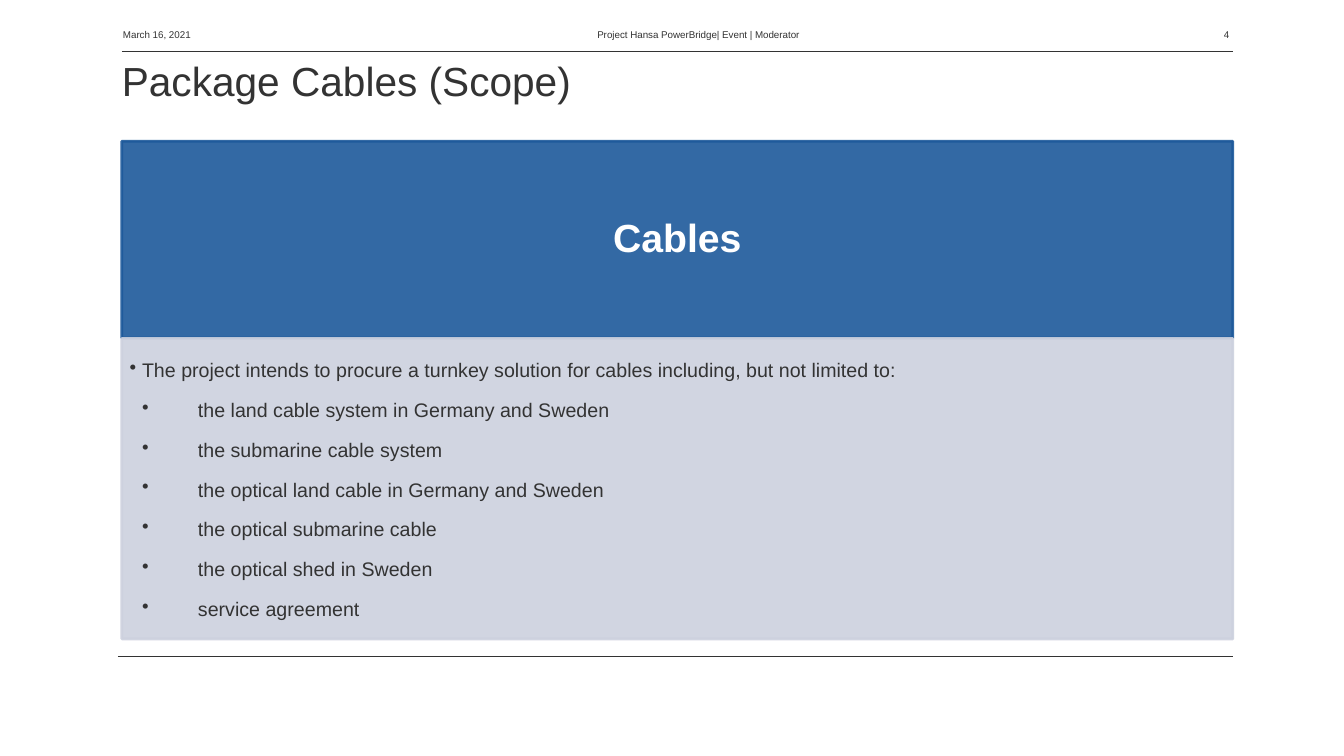
from dataclasses import dataclass

import pptx
import pptx.dml.color
import pptx.enum.shapes
import pptx.enum.text
import pptx.oxml
import pptx.oxml.ns
import pptx.util
from pptx.util import Cm, Pt

ALIGN = pptx.enum.text.PP_ALIGN
ANCHOR = pptx.enum.text.MSO_ANCHOR


@dataclass(frozen=True)
class Theme:
    font: str = "Arial"
    text: str = "333333"
    white: str = "FFFFFF"
    blue: str = "1D599B"
    pale: str = "CDD1DE"
    title_size: int = 29
    heading_size: int = 28
    body_size: int = 14
    header_size: int = 7
    opacity: int = 90


def rgb(value):
    return pptx.dml.color.RGBColor.from_string(value)


class SlideBuilder:
    def __init__(self, slide, theme):
        self.slide = slide
        self.theme = theme

    def frame(self, shape, insets=(0, 0, 0, 0), anchor=ANCHOR.TOP):
        frame = shape.text_frame
        frame.word_wrap = True
        frame.auto_size = pptx.enum.text.MSO_AUTO_SIZE.NONE
        frame.vertical_anchor = anchor
        (frame.margin_left, frame.margin_top,
         frame.margin_right, frame.margin_bottom) = map(Cm, insets)
        return frame

    def add_text(self, paragraph, text, size, color=None, bold=False,
                 align=ALIGN.LEFT, spacing=None):
        paragraph.alignment = align
        if spacing:
            paragraph.line_spacing = spacing
        run = paragraph.add_run()
        run.text = text
        run.font.name = self.theme.font
        run.font.size = Pt(size)
        run.font.bold = bold
        run.font.color.rgb = rgb(color or self.theme.text)

    def title(self, text, left, top, width, height):
        title = self.slide.shapes.title
        title.left, title.top, title.width, title.height = map(
            Cm, (left, top, width, height))
        frame = self.frame(title, insets=(0, 0.1, 0, 0))
        self.add_text(frame.paragraphs[0], text, self.theme.title_size)

    def header(self, text, left, width, align):
        box = self.slide.shapes.add_textbox(Cm(left), Cm(0.69), Cm(width), Cm(0.64))
        self.add_text(self.frame(box).paragraphs[0], text, self.theme.header_size,
                      align=align, spacing=Pt(9.1))

    def rule(self, left, right, y):
        rule = self.slide.shapes.add_connector(
            pptx.enum.shapes.MSO_CONNECTOR.STRAIGHT, Cm(left), Cm(y), Cm(right), Cm(y))
        rule.line.width = Pt(0.5)
        rule.line.color.rgb = rgb(self.theme.text)
        rule._element.spPr.append(pptx.oxml.parse_xml(
            f"<a:effectLst {pptx.oxml.ns.nsdecls('a')}/>"))

    def panel(self, left, top, width, height, color):
        panel = self.slide.shapes.add_shape(
            pptx.enum.shapes.MSO_SHAPE.RECTANGLE,
            Cm(left), Cm(top), Cm(width), Cm(height))
        panel.shadow.inherit = False
        panel.fill.solid()
        panel.fill.fore_color.rgb = rgb(color)
        panel.line.color.rgb = rgb(color)
        panel.line.width = Pt(2)
        for solid in panel._element.spPr.iter(pptx.oxml.ns.qn("a:srgbClr")):
            solid.append(pptx.oxml.parse_xml(
                f"<a:alpha {pptx.oxml.ns.nsdecls('a')} "
                f'val="{self.theme.opacity * 1000}"/>'))
        return panel

    def heading(self, panel, text):
        frame = self.frame(panel, (0.56, 0.3, 0.56, 0.3), ANCHOR.MIDDLE)
        self.add_text(frame.paragraphs[0], text, self.theme.heading_size,
                      self.theme.white, bold=True, align=ALIGN.CENTER, spacing=0.9)

    def bullets(self, panel, items, indents):
        frame = self.frame(panel, (0.2, 0.2, 0.28, 0.3))
        for index, (level, text) in enumerate(items):
            paragraph = frame.add_paragraph() if index else frame.paragraphs[0]
            margin, hanging = indents[level]
            properties = paragraph._p.get_or_add_pPr()
            properties.set("marL", str(Cm(margin)))
            properties.set("indent", str(-Cm(hanging)))
            properties.append(pptx.oxml.parse_xml(
                f"<a:buChar {pptx.oxml.ns.nsdecls('a')} char=\"•\"/>"))
            paragraph.level = level
            paragraph.space_after = Pt(3.2)
            self.add_text(paragraph, text, self.theme.body_size, spacing=1.5)


def main():
    deck = pptx.Presentation()
    deck.slide_width, deck.slide_height = Cm(33.87), Cm(19.05)
    theme = Theme()
    builder = SlideBuilder(deck.slides.add_slide(deck.slide_layouts[5]), theme)
    left, width = 3.07, 28

    # Rules and title
    builder.rule(left, left + width, 1.3)
    builder.rule(2.97, left + width, 16.54)
    builder.title("Package Cables (Scope)", left, 1.3, width, 2.03)

    # Scope panels
    cables = builder.panel(left, 3.56, width, 4.96, theme.blue)
    builder.heading(cables, "Cables")
    scope = builder.panel(left, 8.53, width, 7.57, theme.pale)
    scope_items = [
        (0, "The project intends to procure a turnkey solution for cables "
            "including, but not limited to:"),
        (1, "the land cable system in Germany and Sweden"),
        (1, "the submarine cable system"),
        (1, "the optical land cable in Germany and Sweden"),
        (1, "the optical submarine cable"),
        (1, "the optical shed in Sweden"),
        (1, "service agreement"),
    ]
    builder.bullets(scope, scope_items, indents=[(0.31, 0.31), (1.72, 1.41)])

    # Header line
    builder.header("March 16, 2021", 3.1, 4, ALIGN.LEFT)
    builder.header("Project Hansa PowerBridge| Event | Moderator", 7.6, 20, ALIGN.CENTER)
    builder.header("4", 28.98, 2, ALIGN.RIGHT)

    deck.save("out.pptx")


if __name__ == "__main__":
    main()
